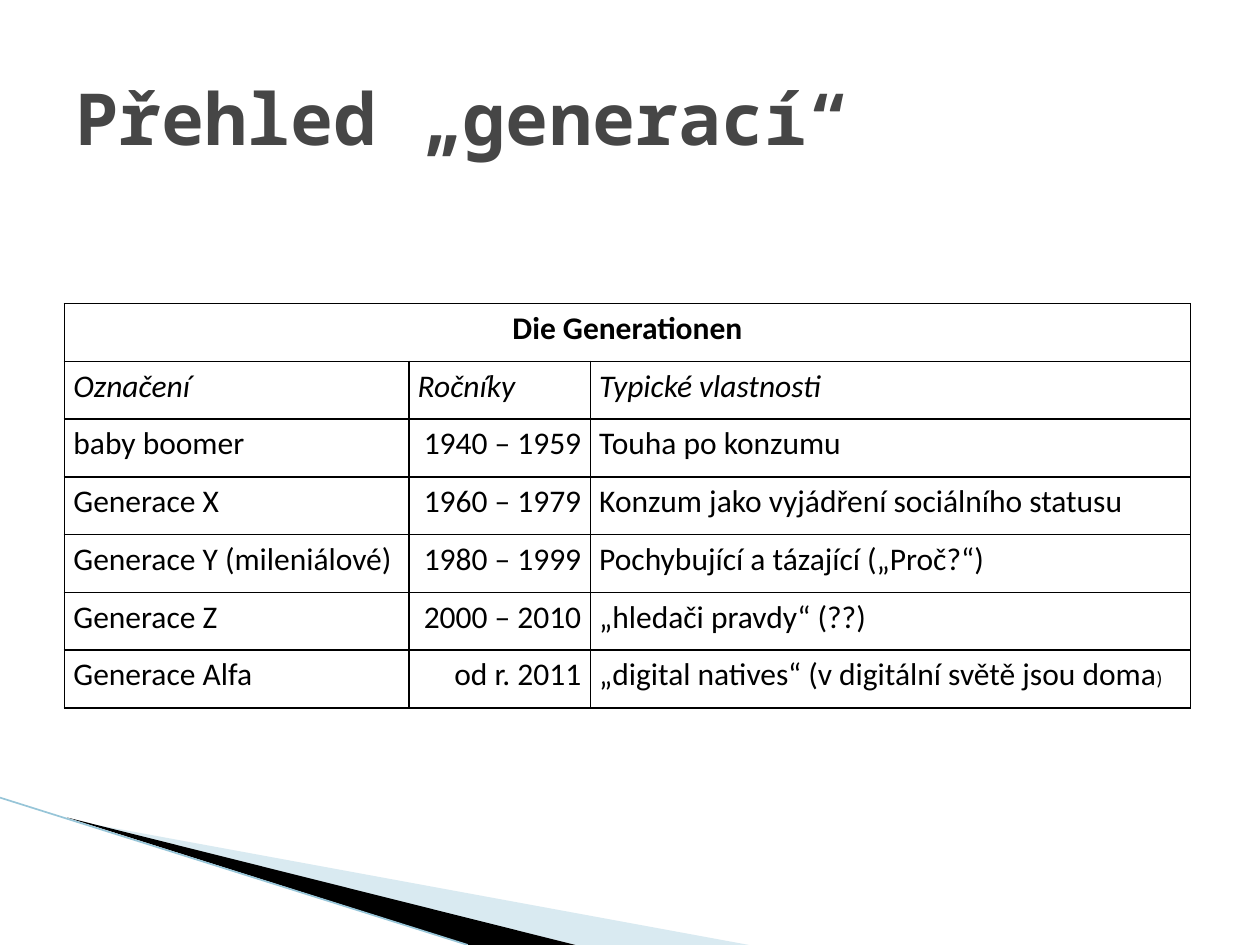
from lxml import etree
from pptx import Presentation
from pptx.dml.color import RGBColor
from pptx.enum import text
from pptx.oxml import ns
from pptx.util import Cm, Pt

BODY_FONT = "Calibri"
TITLE_FONT = "Noto Sans Mono"
COLUMN_WIDTHS = (6.94, 3.66, 12.1)
HEADING = "Die Generationen"
ROWS = [
    ("Označení", "Ročníky", "Typické vlastnosti"),
    ("baby boomer", "1940 – 1959", "Touha po konzumu"),
    ("Generace X", "1960 – 1979", "Konzum jako vyjádření sociálního statusu"),
    ("Generace Y (mileniálové)", "1980 – 1999", "Pochybující a tázající („Proč?“)"),
    ("Generace Z", "2000 – 2010", "„hledači pravdy“ (??)"),
    ("Generace Alfa", "od r. 2011", "„digital natives“ (v digitální světě jsou doma"),
]


def color(value):
    return RGBColor.from_string(value)


def add_wedge(slide, left, top, points, fill, opacity=100):
    corners = [(Cm(left + x), Cm(top + y)) for x, y in points]
    builder = slide.shapes.build_freeform(*corners[0])
    builder.add_line_segments(corners[1:], close=True)
    wedge = builder.convert_to_shape()
    wedge.shadow.inherit = False
    wedge.line.fill.background()
    wedge.fill.solid()
    wedge.fill.fore_color.rgb = color(fill)
    if opacity < 100:
        srgb = wedge._element.spPr.find(".//" + ns.qn("a:srgbClr"))
        etree.SubElement(srgb, ns.qn("a:alpha"), val=str(opacity * 1000))


def add_corner(slide, left, top, width, height):
    # Pale and black wedges running down to the bottom edge
    add_wedge(slide, left, top, [(1.4, 0.45), (width, height), (11.6, height)], "A0CBDC", 40)
    add_wedge(slide, left, top, [(1.35, 0.4), (11.6, height), (9.45, height)], "000000")
    # Thin edge line
    edge = slide.shapes.add_connector(1, Cm(left), Cm(top), Cm(left + 9.43), Cm(top + height))
    edge.line.color.rgb = color("97C5D8")
    edge.line.width = Pt(0.95)
    etree.SubElement(edge._element.spPr, ns.qn("a:effectLst"))


def add_title(slide, left, top, width, height):
    title = slide.shapes.title
    title.left, title.top, title.width, title.height = map(Cm, (left, top, width, height))
    frame = title.text_frame
    frame.text = "Přehled „generací“"
    frame.vertical_anchor = text.MSO_ANCHOR.MIDDLE
    heading = frame.paragraphs[0]
    heading.alignment = text.PP_ALIGN.LEFT
    heading.font.name = TITLE_FONT
    heading.font.size = Pt(41)
    heading.font.bold = True
    heading.font.color.rgb = color("464646")


def format_cell(cell):
    cell.margin_left = cell.margin_right = Cm(0.18)
    cell.margin_top = cell.margin_bottom = 0
    properties = cell._tc.get_or_add_tcPr()
    for side in ("lnL", "lnR", "lnT", "lnB"):
        border = etree.SubElement(properties, ns.qn("a:" + side), w=str(Pt(1)))
        fill = etree.SubElement(border, ns.qn("a:solidFill"))
        etree.SubElement(fill, ns.qn("a:srgbClr"), val="000000")
    cell.fill.background()


def write_cell(cell, words, align=text.PP_ALIGN.LEFT, bold=False, italic=False):
    cell.text = words
    entry = cell.text_frame.paragraphs[0]
    entry.alignment = align
    entry.line_spacing = 1.15
    entry.font.name = BODY_FONT
    entry.font.size = Pt(18)
    entry.font.bold = bold
    entry.font.italic = italic
    entry.font.color.rgb = color("000000")
    return entry


def add_generations(slide, left, top, width, height):
    frame = slide.shapes.add_table(len(ROWS) + 1, len(COLUMN_WIDTHS),
                                   Cm(left), Cm(top), Cm(width), Cm(height))
    table = frame.table
    table.first_row = table.horz_banding = False
    for column, column_width in zip(table.columns, COLUMN_WIDTHS):
        column.width = Cm(column_width)
    for cell in table.iter_cells():
        format_cell(cell)

    # Heading across all columns
    table.cell(0, 0).merge(table.cell(0, len(COLUMN_WIDTHS) - 1))
    write_cell(table.cell(0, 0), HEADING, text.PP_ALIGN.CENTER, bold=True)

    # Column names, then one row per generation
    for r, row in enumerate(ROWS, 1):
        for c, words in enumerate(row):
            is_years = c == 1 and r > 1
            align = text.PP_ALIGN.RIGHT if is_years else text.PP_ALIGN.LEFT
            entry = write_cell(table.cell(r, c), words, align, italic=r == 1)

    # Small closing bracket in the last cell
    bracket = entry.add_run()
    bracket.text = ")"
    bracket.font.size = Pt(11)


def main():
    deck = Presentation()
    deck.slide_width, deck.slide_height = Cm(25.4), Cm(19.05)
    slide = deck.slides.add_slide(deck.slide_layouts[5])
    add_corner(slide, 0, 16.08, 15.1, 2.97)
    add_generations(slide, 1.3, 6.12, sum(COLUMN_WIDTHS), 8.15)
    add_title(slide, 1.27, 0.76, 22.86, 3.18)
    deck.save("out.pptx")


if __name__ == "__main__":
    main()
